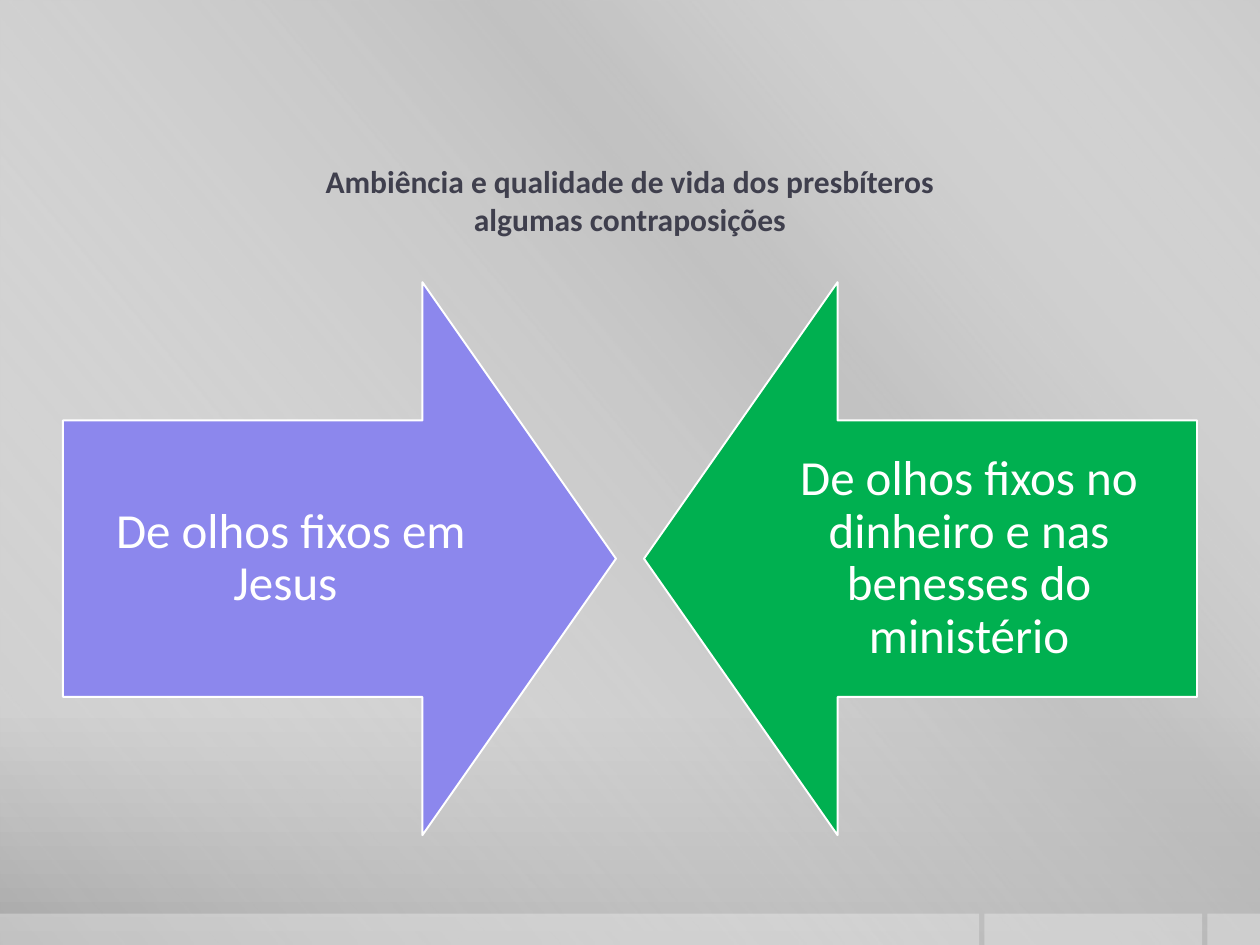
from dataclasses import dataclass

from lxml.etree import SubElement
from pptx import Presentation
from pptx.dml.color import RGBColor
from pptx.enum.shapes import MSO_SHAPE
from pptx.enum.text import MSO_ANCHOR, MSO_AUTO_SIZE, PP_ALIGN
from pptx.oxml.ns import qn
from pptx.util import Pt


@dataclass(frozen=True)
class Theme:
    font: str = "Calibri"
    title_size: int = 18
    arrow_size: int = 28
    title: str = "3F3F4D"
    white: str = "FFFFFF"
    violet: str = "8C87ED"
    green: str = "00B050"
    backdrop: tuple = ((0, "CBCBCB", 100), (76, "C8C8C8", 100), (100, "A7A7A7", 100))
    sheen: tuple = ((0, "FFFFFF", 0), (34, "BFBFBF", 61), (38, "BFBFBF", 76), (100, "FFFFFF", 0))
    bar_opacity: int = 30


THEME = Theme()
WIDTH, HEIGHT = 720, 540
MARGIN = 36
ARROW_SIZE = 316
ARROW_TOP = 161.25
LABEL_WIDTH = 260.5
BAR_TOP = 522
BAR_SPANS = ((0, 559.5), (562.5, 687), (690, WIDTH))


def set_opacity(color, percent):
    SubElement(color, qn("a:alpha")).set("val", str(percent * 1000))


def set_gradient(fill, element, stops, angle):
    fill.gradient()
    fill.gradient_angle = 360 - angle
    stop_list = next(element.iter(qn("a:gsLst")))
    for stop in list(stop_list):
        stop_list.remove(stop)
    for position, value, opacity in stops:
        stop = SubElement(stop_list, qn("a:gs"), pos=str(position * 1000))
        color = SubElement(stop, qn("a:srgbClr"), val=value)
        if opacity < 100:
            set_opacity(color, opacity)


def add_shape(slide, kind, left, top, width, height, fill=None, line=None):
    shape = slide.shapes.add_shape(kind, Pt(left), Pt(top), Pt(width), Pt(height))
    shape.shadow.inherit = False
    if fill:
        shape.fill.solid()
        shape.fill.fore_color.rgb = RGBColor.from_string(fill)
    if line:
        shape.line.color.rgb = RGBColor.from_string(line)
        shape.line.width = Pt(1.1)
    else:
        shape.line.fill.background()
    return shape


def write_text(shape, text, *, size, color, bold=False, spacing=1.0, inset_x=0, inset_y=0):
    frame = shape.text_frame
    frame.word_wrap = True
    frame.auto_size = MSO_AUTO_SIZE.NONE
    frame.vertical_anchor = MSO_ANCHOR.MIDDLE
    frame.margin_left = frame.margin_right = Pt(inset_x)
    frame.margin_top = frame.margin_bottom = Pt(inset_y)
    paragraph = frame.paragraphs[0]
    paragraph.text = text
    paragraph.alignment = PP_ALIGN.CENTER
    paragraph.line_spacing = spacing
    for run in paragraph.runs:
        run.font.name = THEME.font
        run.font.size = Pt(size)
        run.font.bold = bold
        run.font.color.rgb = RGBColor.from_string(color)


def add_backdrop(slide):
    background = slide.background.fill
    set_gradient(background, slide.element, THEME.backdrop, 90)
    sheen = add_shape(slide, MSO_SHAPE.RECTANGLE, 0, 0, WIDTH, HEIGHT)
    set_gradient(sheen.fill, sheen.element, THEME.sheen, 140)
    for left, right in BAR_SPANS:
        bar = add_shape(slide, MSO_SHAPE.RECTANGLE, left, BAR_TOP, right - left,
                        HEIGHT - BAR_TOP, fill=THEME.white)
        set_opacity(next(bar.element.spPr.iter(qn("a:srgbClr"))), THEME.bar_opacity)


def add_title(slide, text):
    title = slide.shapes.title
    title.left, title.top = Pt(MARGIN), Pt(78)
    title.width, title.height = Pt(WIDTH - 2 * MARGIN), Pt(72)
    write_text(title, text, size=THEME.title_size, color=THEME.title, bold=True, inset_y=3.6)
    title.element.getparent().append(title.element)


def add_arrow(slide, text, left, label_left, rotation, fill):
    arrow = add_shape(slide, MSO_SHAPE.DOWN_ARROW, left, ARROW_TOP, ARROW_SIZE, ARROW_SIZE,
                      fill=fill, line=THEME.white)
    arrow.adjustments[0], arrow.adjustments[1] = 0.5, 0.35
    arrow.rotation = rotation
    label = slide.shapes.add_textbox(Pt(label_left), Pt(ARROW_TOP + ARROW_SIZE / 4),
                                     Pt(LABEL_WIDTH), Pt(ARROW_SIZE / 2))
    write_text(label, text, size=THEME.arrow_size, color=THEME.white, spacing=0.9,
               inset_x=16, inset_y=16)


def main():
    presentation = Presentation()
    presentation.slide_width, presentation.slide_height = Pt(WIDTH), Pt(HEIGHT)
    slide = presentation.slides.add_slide(presentation.slide_layouts[5])
    add_backdrop(slide)
    add_title(slide, "Ambiência e qualidade de vida dos presbíteros\valgumas contraposições")
    right_edge = WIDTH - MARGIN
    add_arrow(slide, "De olhos fixos em Jesus ", MARGIN, MARGIN, 270, THEME.violet)
    add_arrow(slide, "De olhos fixos no dinheiro e nas benesses do ministério",
              right_edge - ARROW_SIZE, right_edge - LABEL_WIDTH, 90, THEME.green)
    presentation.save("out.pptx")


if __name__ == "__main__":
    main()
